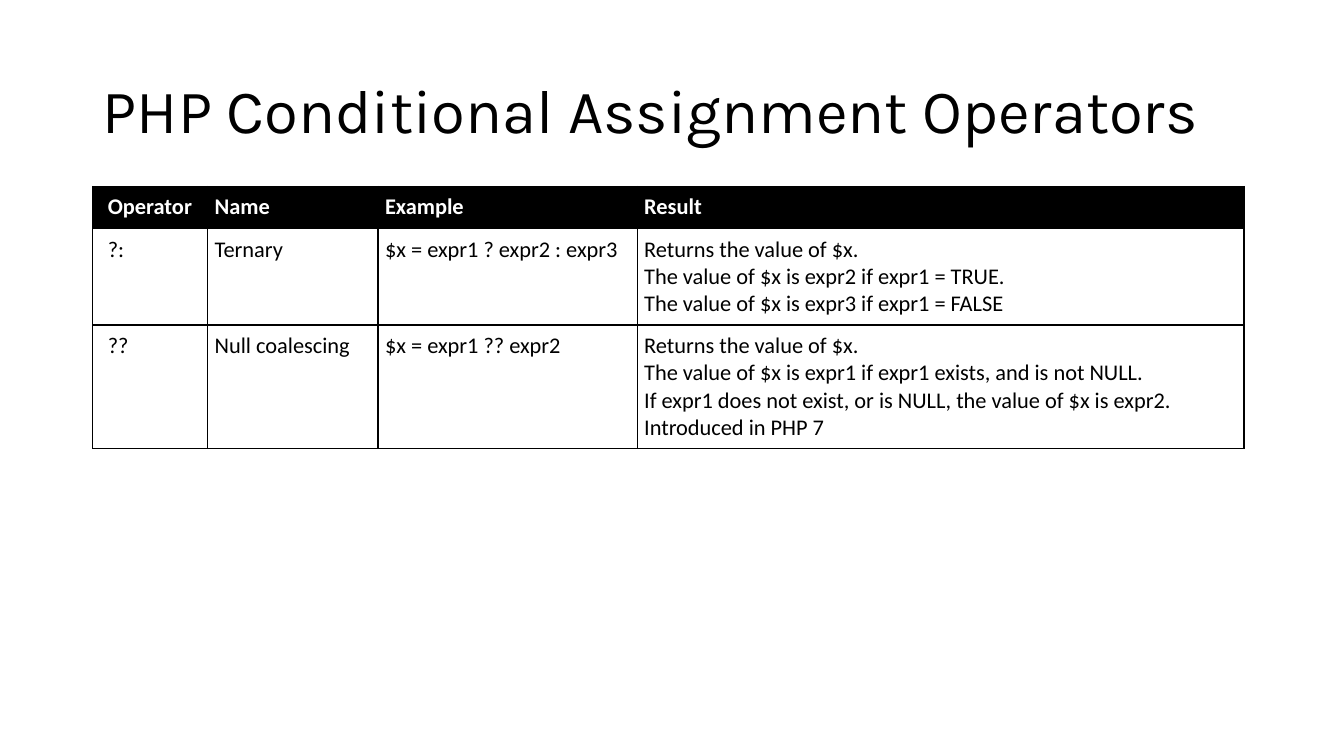
from lxml.etree import SubElement
from pptx import Presentation
from pptx.dml.color import RGBColor
from pptx.enum.text import MSO_ANCHOR as Anchor, MSO_AUTO_SIZE as AutoSize, PP_ALIGN as Align
from pptx.oxml.ns import qn
from pptx.util import Inches, Pt

COLORS = {"black": "000000", "white": "FFFFFF"}
COLUMN_WIDTHS = [1.14, 1.69, 2.57, 6.02]
ROW_HEIGHTS = [0.42, 0.95, 1.22]
OPERATORS = [
    ["Operator", "Name", "Example", "Result"],
    ["?:", "Ternary", "$x = expr1 ? expr2 : expr3",
     "Returns the value of $x.\n"
     "The value of $x is expr2 if expr1 = TRUE.\n"
     "The value of $x is expr3 if expr1 = FALSE"],
    ["??", "Null coalescing", "$x = expr1 ?? expr2",
     "Returns the value of $x.\n"
     "The value of $x is expr1 if expr1 exists, and is not NULL.\n"
     "If expr1 does not exist, or is NULL, the value of $x is expr2.\n"
     "Introduced in PHP 7"],
]


class SlideBuilder:
    """Hold the style and the current slide."""

    title_font = "Karla"
    table_font = "Calibri"

    def __init__(self, presentation):
        """Add a slide with a title placeholder."""
        self.slide = presentation.slides.add_slide(presentation.slide_layouts[5])

    def add_text(self, paragraph, text, font, size, color, bold=False):
        """Add text as runs, with a line break between lines."""
        paragraph.alignment = Align.LEFT
        for index, line in enumerate(text.split("\n")):
            if index:
                paragraph.add_line_break()
            run = paragraph.add_run()
            run.text = line
            run.font.name = font
            run.font.size = Pt(size)
            run.font.bold = bold
            run.font.color.rgb = RGBColor.from_string(COLORS[color])

    def title(self, text, left, top, width, height):
        """Place and fill the title placeholder."""
        shape = self.slide.shapes.title
        shape.left, shape.top = Inches(left), Inches(top)
        shape.width, shape.height = Inches(width), Inches(height)
        frame = shape.text_frame
        frame.word_wrap = True
        frame.auto_size = AutoSize.NONE
        frame.vertical_anchor = Anchor.MIDDLE
        paragraph = frame.paragraphs[0]
        paragraph.line_spacing = 0.9
        self.add_text(paragraph, text, self.title_font, 44, "black")

    def border(self, cell):
        """Draw a thin line on each side of a cell."""
        properties = cell._tc.get_or_add_tcPr()
        for index, side in enumerate(("lnL", "lnR", "lnT", "lnB")):
            line = properties.makeelement(qn(f"a:{side}"), {"w": str(Pt(1))})
            fill = SubElement(line, qn("a:solidFill"))
            SubElement(fill, qn("a:srgbClr"), val=COLORS["black"])
            properties.insert(index, line)

    def table(self, rows, left, top, widths, heights):
        """Add a bordered table with a dark header row."""
        table = self.slide.shapes.add_table(
            len(rows), len(widths), Inches(left), Inches(top),
            Inches(sum(widths)), Inches(sum(heights))).table
        for column, width in zip(table.columns, widths):
            column.width = Inches(width)
        for row_index, (row, height) in enumerate(zip(table.rows, heights)):
            row.height = Inches(height)
            header = row_index == 0
            for column_index, cell in enumerate(row.cells):
                cell.margin_left = Inches(0.07 if column_index else 0.15)
                cell.margin_right = cell.margin_top = cell.margin_bottom = Inches(0.07)
                cell.fill.solid()
                cell.fill.fore_color.rgb = RGBColor.from_string(
                    COLORS["black" if header else "white"])
                self.border(cell)
                self.add_text(cell.text_frame.paragraphs[0], rows[row_index][column_index],
                              self.table_font, 16, "white" if header else "black", header)


def main():
    """Build and save the presentation."""
    presentation = Presentation()
    presentation.slide_width, presentation.slide_height = Inches(13.33), Inches(7.5)
    builder = SlideBuilder(presentation)
    builder.title("PHP Conditional Assignment Operators", 0.92, 0.4, 11.5, 1.45)
    builder.table(OPERATORS, 0.92, 1.85, COLUMN_WIDTHS, ROW_HEIGHTS)
    presentation.save("out.pptx")


if __name__ == "__main__":
    main()
